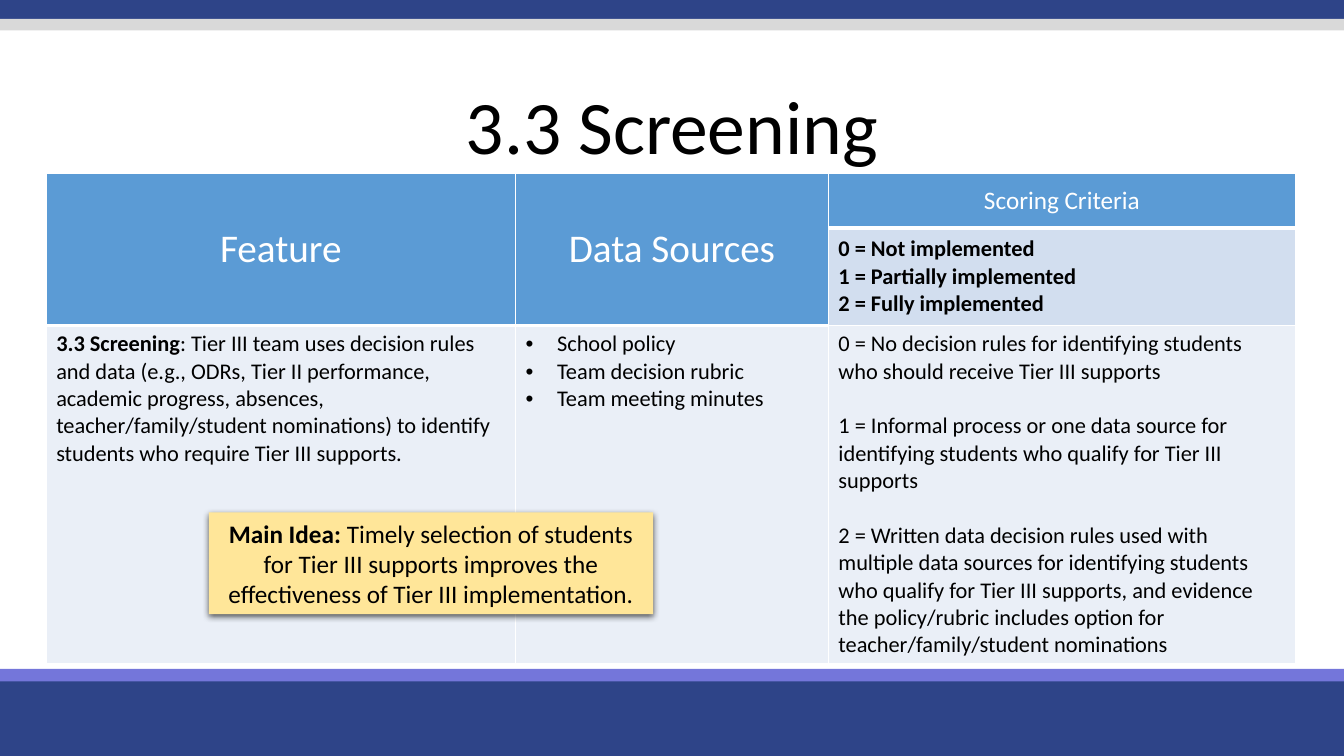
import dataclasses

import pptx
import pptx.dml.color
import pptx.enum.shapes
import pptx.enum.text
import pptx.oxml
import pptx.oxml.ns
import pptx.util

PX = 9525  # EMU per px, 96 px to the inch
ALIGN = pptx.enum.text.PP_ALIGN
ANCHOR = pptx.enum.text.MSO_ANCHOR


@dataclasses.dataclass(frozen=True)
class Theme:
    font: str = "Calibri"
    navy: str = "2E4488"
    grey: str = "D9D9D9"
    lilac: str = "7476DA"
    header: str = "5B9BD5"
    band: str = "D2DEEF"
    body: str = "EAEFF7"
    callout: str = "FFE699"
    black: str = "000000"
    white: str = "FFFFFF"
    title_size: int = 54
    heading_size: int = 28
    medium_size: int = 18
    text_size: int = 16


THEME = Theme()


def px(length):
    return pptx.util.Emu(length * PX)


def color(value):
    return pptx.dml.color.RGBColor.from_string(value)


def add_xml(parent, xml):
    namespaces = pptx.oxml.ns.nsdecls("a")
    parent.append(pptx.oxml.parse_xml(xml.replace(" ", f" {namespaces} ", 1)))


def add_bullet(para, indent):
    properties = para._p.get_or_add_pPr()
    properties.set("marL", str(px(indent)))
    properties.set("indent", str(px(-indent)))
    add_xml(properties, '<a:buFont typeface="Arial"/>')
    add_xml(properties, '<a:buChar char="•"/>')


def write(frame, lines, size, ink=THEME.black, align=ALIGN.LEFT, bold=False,
          lead="", bullet=False, gap=0):
    """Fill a frame with one paragraph a line; lead is a bold opening."""
    frame.word_wrap = True
    frame.text = "\n".join(lines)
    for index, para in enumerate(frame.paragraphs):
        if bullet:
            add_bullet(para, 30)
        para.alignment = align
        if index and gap:
            para.space_before = pptx.util.Pt(gap)
        if lead and index == 0:
            para.text = lead
            para.add_run().text = lines[0]
        for number, span in enumerate(para.runs):
            span.font.name = THEME.font
            span.font.size = pptx.util.Pt(size)
            span.font.bold = bold or (bool(lead) and index == number == 0)
            span.font.color.rgb = color(ink)


def add_block(page, left, top, width, height, fill):
    block = page.shapes.add_shape(pptx.enum.shapes.MSO_SHAPE.RECTANGLE,
                                  px(left), px(top), px(width), px(height))
    block.shadow.inherit = False
    block.fill.solid()
    block.fill.fore_color.rgb = color(fill)
    block.line.fill.background()
    return block


def add_title(page, text):
    box = page.shapes.add_textbox(0, px(66), px(1280), px(116))
    write(box.text_frame, [text], THEME.title_size, align=ALIGN.CENTER)
    box.text_frame.vertical_anchor = ANCHOR.MIDDLE
    box.text_frame.paragraphs[0].line_spacing = 0.9


def style_cell(cell, fill, bottom=1):
    """Give the cell white borders and a plain fill."""
    properties = cell._tc.get_or_add_tcPr()
    for side, width in (("L", 1), ("R", 1), ("T", 1), ("B", bottom)):
        add_xml(properties, f'<a:ln{side} w="{pptx.util.Pt(width)}"><a:solidFill>'
                            f'<a:srgbClr val="{THEME.white}"/></a:solidFill></a:ln{side}>')
    cell.fill.solid()
    cell.fill.fore_color.rgb = color(fill)


def add_rubric(page):
    columns, rows = (447, 298, 445), (52, 93, 322)
    table = page.shapes.add_table(len(rows), len(columns), px(44), px(165),
                                  px(sum(columns)), px(sum(rows))).table
    table.first_row = table.horz_banding = False
    for column, width in zip(table.columns, columns):
        column.width = px(width)
    for row, height in zip(table.rows, rows):
        row.height = px(height)

    fills = ((THEME.header,) * 3,
             (THEME.header, THEME.header, THEME.band),
             (THEME.body,) * 3)
    for r, row_fills in enumerate(fills):
        for c, fill in enumerate(row_fills):
            style_cell(table.cell(r, c), fill, 3 if r == 0 else 1)
    for c in range(2):
        table.cell(0, c).merge(table.cell(1, c))

    headings = (("Feature", THEME.heading_size), ("Data Sources", THEME.heading_size),
                ("Scoring Criteria", THEME.medium_size))
    for c, (heading, size) in enumerate(headings):
        cell = table.cell(0, c)
        cell.vertical_anchor = ANCHOR.MIDDLE
        write(cell.text_frame, [heading], size, THEME.white, ALIGN.CENTER)

    scale = table.cell(1, 2)
    scale.vertical_anchor = ANCHOR.MIDDLE
    write(scale.text_frame,
          ["0 = Not implemented", "1 = Partially implemented", "2 = Fully implemented"],
          THEME.text_size, bold=True)

    feature, sources, criteria = (table.cell(2, c).text_frame for c in range(3))
    write(feature,
          [": Tier III team uses decision rules and data (e.g., ODRs, Tier II performance, "
           "academic progress, absences, teacher/family/student nominations) to identify "
           "students who require Tier III supports."],
          THEME.text_size, lead="3.3 Screening")
    write(sources, ["School policy", "Team decision rubric", "Team meeting minutes"],
          THEME.text_size, bullet=True)
    write(criteria,
          ["0 = No decision rules for identifying students who should receive "
           "Tier III supports",
           "1 = Informal process or one data source for identifying students who "
           "qualify for Tier III supports",
           "2 = Written data decision rules used with multiple data sources for "
           "identifying students who qualify for Tier III supports, and evidence the "
           "policy/rubric includes option for teacher/family/student nominations"],
          THEME.text_size, gap=19.5)


def add_callout(page):
    callout = add_block(page, 199, 488, 423, 97, THEME.callout)
    effects = callout._element.spPr.find(pptx.oxml.ns.qn("a:effectLst"))
    add_xml(effects, f'<a:outerShdw blurRad="{pptx.util.Pt(4.5)}" '
                     f'dist="{pptx.util.Pt(1.5)}" dir="5400000" rotWithShape="0">'
                     f'<a:srgbClr val="{THEME.black}"><a:alpha val="63000"/></a:srgbClr>'
                     '</a:outerShdw>')
    write(callout.text_frame,
          ["Timely selection of students for Tier III supports improves the "
           "effectiveness of Tier III implementation."],
          THEME.medium_size, align=ALIGN.CENTER, lead="Main Idea: ")
    callout.text_frame.auto_size = pptx.enum.text.MSO_AUTO_SIZE.SHAPE_TO_FIT_TEXT


def main():
    deck = pptx.Presentation()
    deck.slide_width, deck.slide_height = px(1280), px(720)
    page = deck.slides.add_slide(deck.slide_layouts[6])
    for top, height, fill in ((-3, 21, THEME.navy), (18, 11, THEME.grey),
                              (643, 77, THEME.navy), (637, 12, THEME.lilac)):
        add_block(page, 0, top, 1280, height, fill)
    add_title(page, "3.3 Screening")
    add_rubric(page)
    add_callout(page)
    deck.save("out.pptx")


if __name__ == "__main__":
    main()
